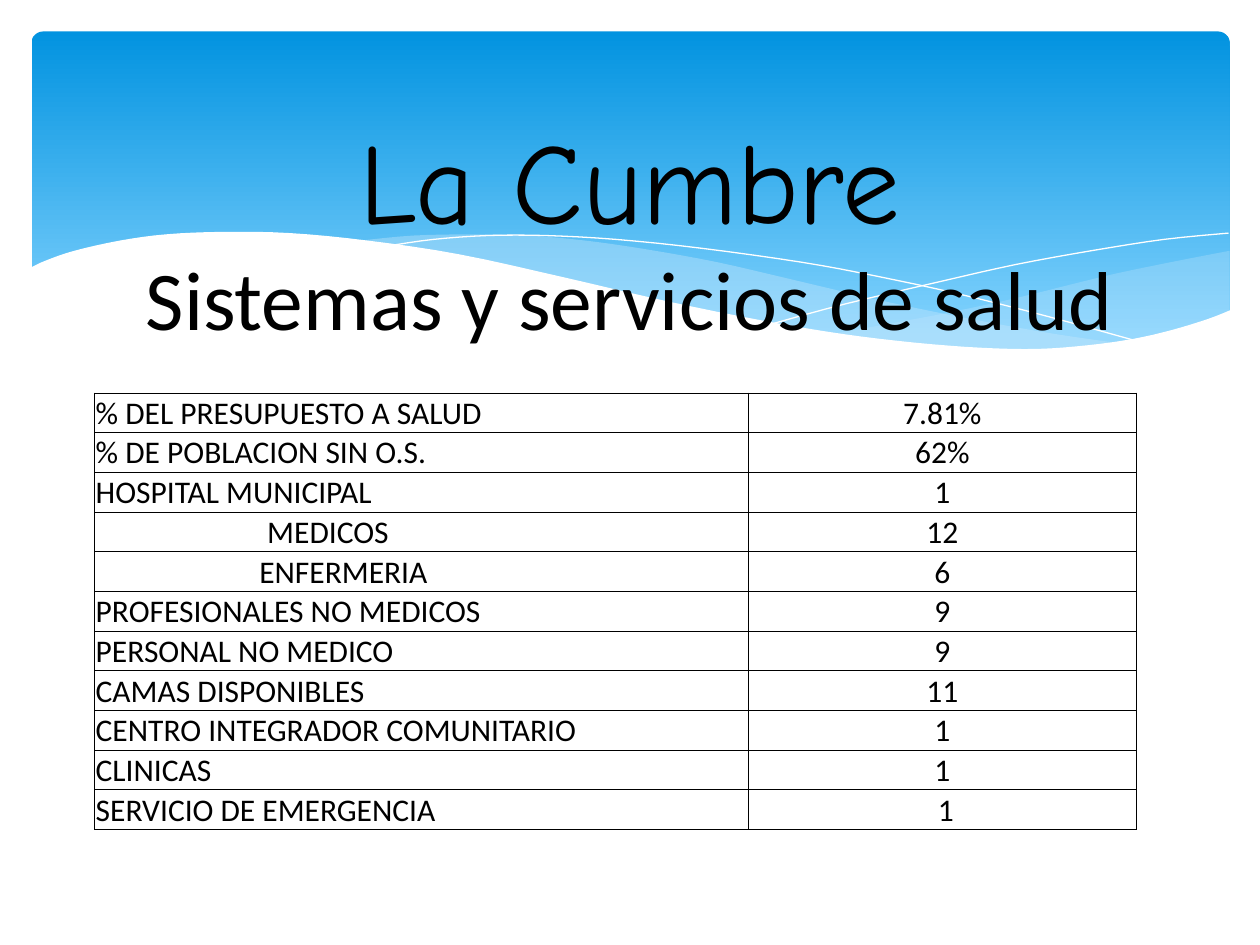
import pptx
import pptx.dml.color
import pptx.enum.shapes
import pptx.enum.text
import pptx.oxml
import pptx.oxml.ns
import pptx.util

Pt = pptx.util.Pt
ALIGN = pptx.enum.text.PP_ALIGN
ANCHOR = pptx.enum.text.MSO_ANCHOR

COLORS = {"sky": "0293E0", "pale sky": "83D3FE", "mist": "C6E7FC",
          "white": "FFFFFF", "black": "000000"}

# Wave edges, in points from the top left of the band
RIGHT_WAVE = [
    [(684.7, 125.3), (655.2, 131), (623.5, 137.5), (601.9, 142.6), (561.6, 152.6),
     (524.2, 160.6), (490.3, 167), (457.9, 172.8)],
    [(457.9, 172.8), (479.5, 175.7), (509, 179.3), (535.7, 181.4), (568.1, 182.2),
     (596.9, 180.7), (622.1, 177.8), (645.1, 172.8), (665.3, 167), (684.7, 159.8)],
]
LONG_WAVE = [
    [(625, 178.6), (584.6, 172.8), (540, 164.9), (490.3, 154.8), (434.9, 141.8),
     (391.7, 131.8), (352.1, 124.6), (316.8, 119.5), (284.4, 116.6), (255.6, 115.9),
     (218.2, 116.6), (187.9, 119.5)],
    [(187.9, 119.5), (228.2, 125.3), (272.9, 133.9), (305.3, 141.8), (363.6, 154.8),
     (414.7, 165.6), (460.8, 173.5), (501.8, 179.3), (538.6, 181.4), (571, 182.2),
     (599, 181.4), (625, 178.6)],
]
FALLING_LINE = [
    [(204.5, 122.4), (229.7, 118.8), (260.6, 116.6), (293.8, 116.6), (334.1, 118.8),
     (382.3, 123.8), (439.9, 131.8), (482.4, 139.7), (529.2, 149.8), (580.3, 162.7),
     (635, 177.8)],
]
RISING_LINE = [
    [(423.4, 167), (465.8, 155.5), (520.6, 142.6), (562.3, 133.2), (605.5, 125.3),
     (647.3, 118.8), (684, 115.2)],
]
WHITE_WAVE = [
    [(-1.4, 135.4), (7.9, 131), (24.5, 125.3), (50.4, 119.5), (77, 115.9),
     (109.4, 114.5), (147.6, 115.2), (192.2, 119.5), (244.8, 127.4), (303.8, 140.4),
     (362.9, 154.1), (416.2, 164.9), (463, 172.8), (504.7, 177.8), (542.2, 180.7),
     (574.6, 181.4), (603.4, 179.3), (629.3, 175.7), (651.6, 170.6), (672.5, 164.2),
     (685.4, 159.1)],
    [(685.4, 218.9), (-1.4, 218.9)],
]

# Label, value, indent of the label, indent of the value
SERVICES = [
    ("% DEL PRESUPUESTO A SALUD", "7.81%", 0, 0),
    ("% DE POBLACION SIN O.S.", "62%", 0, 0),
    ("HOSPITAL MUNICIPAL", "1", 0, 0),
    ("MEDICOS", "12", 98, 0),
    ("ENFERMERIA", "6", 93.5, 0),
    ("PROFESIONALES NO MEDICOS", "9", 0, 0),
    ("PERSONAL NO MEDICO", "9", 0, 0),
    ("CAMAS DISPONIBLES", "11", 0, 0),
    ("CENTRO INTEGRADOR COMUNITARIO", "1", 0, 0),
    ("CLINICAS", "1", 0, 0),
    ("SERVICIO DE EMERGENCIA", "1", 0, 4),
]


def rgb(name):
    return pptx.dml.color.RGBColor.from_string(COLORS[name])


def style_text(paragraph, size, font, align):
    paragraph.alignment = align
    for run in paragraph.runs:
        run.font.size = Pt(size)
        run.font.name = font
        run.font.color.rgb = rgb("black")


def smooth(knots, steps=4):
    """Sample a Catmull-Rom curve through the knots."""
    padded = [knots[0], *knots, knots[-1]]
    curve = [knots[0]]
    for a, b, c, d in zip(padded, padded[1:], padded[2:], padded[3:]):
        for step in range(1, steps + 1):
            t = step / steps
            curve.append(tuple(
                (2 * q + (r - p) * t + (2 * p - 5 * q + 4 * r - s) * t ** 2
                 + (3 * q - p - 3 * r + s) * t ** 3) / 2
                for p, q, r, s in zip(a, b, c, d)))
    return curve


def add_wave(slide, left, top, edges, color, opacity=100, closed=True):
    points = [(Pt(left + x), Pt(top + y)) for edge in edges for x, y in smooth(edge)]
    builder = slide.shapes.build_freeform(*points[0])
    builder.add_line_segments(points[1:], close=closed)
    wave = builder.convert_to_shape()
    wave.shadow.inherit = False
    if not closed:
        wave.fill.background()
        wave.line.color.rgb = rgb(color)
        wave.line.width = Pt(0)
        return
    wave.line.fill.background()
    wave.fill.solid()
    wave.fill.fore_color.rgb = rgb(color)
    if opacity < 100:
        tint = wave.fill._xPr.find(".//" + pptx.oxml.ns.qn("a:srgbClr"))
        tint.append(pptx.oxml.parse_xml(
            f'<a:alpha {pptx.oxml.ns.nsdecls("a")} val="{opacity * 1000}"/>'))


def add_band(slide, left, top, width, height):
    band = slide.shapes.add_shape(pptx.enum.shapes.MSO_SHAPE.ROUNDED_RECTANGLE,
                                  Pt(left), Pt(top), Pt(width), Pt(height))
    band.adjustments[0] = 0.034
    band.shadow.inherit = False
    band.line.fill.background()
    band.fill.gradient()
    band.fill.gradient_angle = 270
    stops = zip(band.fill.gradient_stops, ("sky", "pale sky"), (0, 0.9))
    for stop, color, position in stops:
        stop.color.rgb = rgb(color)
        stop.position = position
    add_wave(slide, left, top, RIGHT_WAVE, "mist", opacity=29)
    add_wave(slide, left, top, LONG_WAVE, "mist", opacity=40)
    add_wave(slide, left, top, FALLING_LINE, "white", closed=False)
    add_wave(slide, left, top, RISING_LINE, "white", closed=False)
    add_wave(slide, left, top, WHITE_WAVE, "white")


def add_heading(slide, left, top, width, height):
    frame = slide.shapes.add_textbox(Pt(left), Pt(top), Pt(width), Pt(height)).text_frame
    frame.word_wrap = True
    frame.vertical_anchor = ANCHOR.BOTTOM
    frame.margin_left = frame.margin_right = frame.margin_top = frame.margin_bottom = 0
    frame.text = "La Cumbre\nSistemas y servicios de salud"
    town, topic = frame.paragraphs
    style_text(town, 65.7, "Comic Neue", ALIGN.CENTER)
    style_text(topic, 47.7, "Calibri", ALIGN.CENTER)


def add_borders(cell):
    properties = cell._tc.get_or_add_tcPr()
    for position, side in enumerate(("lnL", "lnR", "lnT", "lnB")):
        properties.insert(position, pptx.oxml.parse_xml(
            f'<a:{side} {pptx.oxml.ns.nsdecls("a")} w="{Pt(0.5)}"><a:solidFill>'
            f'<a:srgbClr val="{COLORS["black"]}"/></a:solidFill></a:{side}>'))


def fill_cell(cell, text, align, indent):
    cell.margin_left = cell.margin_right = cell.margin_top = Pt(0.72)
    cell.margin_bottom = 0
    cell.vertical_anchor = ANCHOR.BOTTOM
    cell.fill.background()
    add_borders(cell)
    cell.text_frame.text = text
    paragraph = cell.text_frame.paragraphs[0]
    style_text(paragraph, 18, "Calibri", align)
    if indent:
        paragraph._p.get_or_add_pPr().set("marL", str(Pt(indent)))


def add_services(slide, left, top, width, height):
    table = slide.shapes.add_table(len(SERVICES), 2, Pt(left), Pt(top),
                                   Pt(width), Pt(height)).table
    table.first_row = table.horz_banding = False
    label_width = 373.5
    table.columns[0].width = Pt(label_width)
    table.columns[1].width = Pt(width - label_width)
    for row, (label, value, label_indent, value_indent) in enumerate(SERVICES):
        table.rows[row].height = Pt(height / len(SERVICES))
        fill_cell(table.cell(row, 0), label, ALIGN.LEFT, label_indent)
        fill_cell(table.cell(row, 1), value, ALIGN.CENTER, value_indent)


def main():
    deck = pptx.Presentation()
    deck.slide_width, deck.slide_height = Pt(720), Pt(540)
    slide = deck.slides.add_slide(deck.slide_layouts[6])
    add_band(slide, 18, 18, 684.7, 194.4)
    add_heading(slide, 36, 60, 648, 138.5)
    add_services(slide, 54, 224.6, 595.5, 249.7)
    deck.save("out.pptx")


if __name__ == "__main__":
    main()
